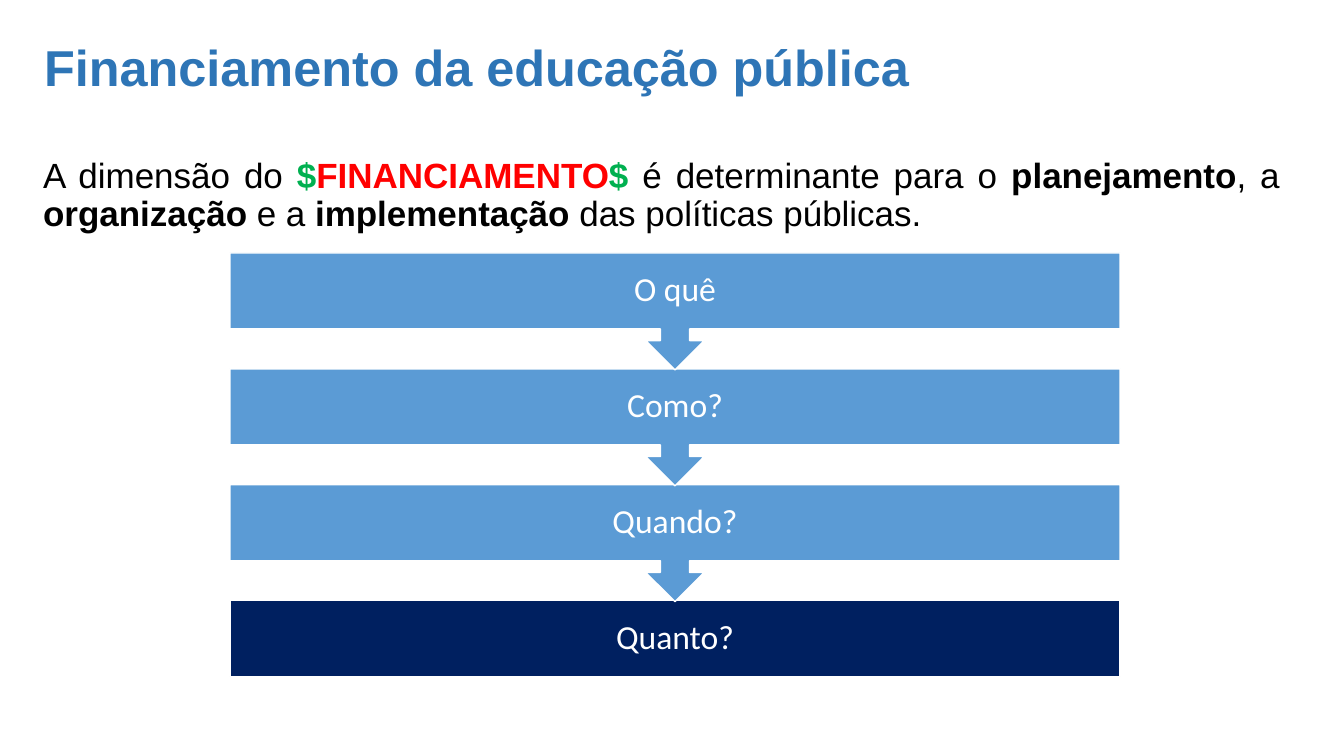
import pptx
import pptx.util
from pptx.dml.color import RGBColor
from pptx.enum.shapes import MSO_SHAPE
from pptx.enum.text import MSO_ANCHOR, PP_ALIGN

WIDTH, HEIGHT = 13.33, 7.5
WHITE = RGBColor(0xFF, 0xFF, 0xFF)
BLACK = RGBColor(0, 0, 0)
RED = RGBColor(0xFF, 0, 0)
GREEN = RGBColor(0, 0xB0, 0x50)
TITLE_BLUE = RGBColor(0x2E, 0x75, 0xB6)
STEP_BLUE = RGBColor(0x5B, 0x9B, 0xD5)
NAVY = RGBColor(0, 0x20, 0x60)

STEPS = ["O quê", "Como?", "Quando?", "Quanto?"]
STEP_LEFT, STEP_TOP, STEP_WIDTH = 2.28, 2.51, 8.83
STEP_PITCH, BAR_HEIGHT, CALLOUT_HEIGHT = 1.15, 0.75, 1.16
INTRO = [
    ("A dimensão do ", BLACK, False),
    ("$", GREEN, True),
    ("FINANCIAMENTO", RED, True),
    ("$ ", GREEN, True),
    ("é determinante para o ", BLACK, False),
    ("planejamento", BLACK, True),
    (", a ", BLACK, False),
    ("organização", BLACK, True),
    (" e a ", BLACK, False),
    ("implementação", BLACK, True),
    (" das políticas públicas.", BLACK, False),
]


def inches(*lengths):
    return [pptx.util.Inches(length) for length in lengths]


def style_run(r, size, font, color, bold=False):
    r.font.size = pptx.util.Pt(size)
    r.font.name = font
    r.font.color.rgb = color
    r.font.bold = bold


def add_text(s, box, runs, size, align, anchor):
    tf = s.shapes.add_textbox(*inches(*box)).text_frame
    tf.word_wrap = True
    tf.vertical_anchor = anchor
    p = tf.paragraphs[0]
    p.alignment = align
    p.line_spacing = 0.9
    for text, color, bold in runs:
        r = p.add_run()
        r.text = text
        style_run(r, size, "Arial", color, bold)


def add_step(s, row, text, last):
    kind = MSO_SHAPE.RECTANGLE if last else MSO_SHAPE.DOWN_ARROW_CALLOUT
    height = BAR_HEIGHT if last else CALLOUT_HEIGHT
    top = STEP_TOP + row * STEP_PITCH
    sp = s.shapes.add_shape(kind, *inches(STEP_LEFT, top, STEP_WIDTH, height))
    sp.shadow.inherit = False
    sp.fill.solid()
    sp.fill.fore_color.rgb = NAVY if last else STEP_BLUE
    sp.line.color.rgb = WHITE
    sp.line.width = pptx.util.Pt(1)
    tf = sp.text_frame
    tf.text = text
    tf.vertical_anchor = MSO_ANCHOR.MIDDLE
    p = tf.paragraphs[0]
    p.alignment = PP_ALIGN.CENTER
    p.line_spacing = 0.9
    style_run(p.runs[0], 24, "Calibri", WHITE)


def main():
    """Build the slide on public education funding."""
    prs = pptx.Presentation()
    prs.slide_width, prs.slide_height = inches(WIDTH, HEIGHT)
    s = prs.slides.add_slide(prs.slide_layouts[6])
    add_text(s, (0.33, 1.52, 12.46, 0.99), INTRO, 25,
             PP_ALIGN.JUSTIFY, MSO_ANCHOR.TOP)
    for row in reversed(range(len(STEPS))):
        add_step(s, row, STEPS[row], row == len(STEPS) - 1)
    add_text(s, (0.34, 0.18, 11.4, 1.03),
             [("Financiamento da educação pública", TITLE_BLUE, True)], 36,
             PP_ALIGN.LEFT, MSO_ANCHOR.MIDDLE)
    prs.save("out.pptx")


if __name__ == "__main__":
    main()
